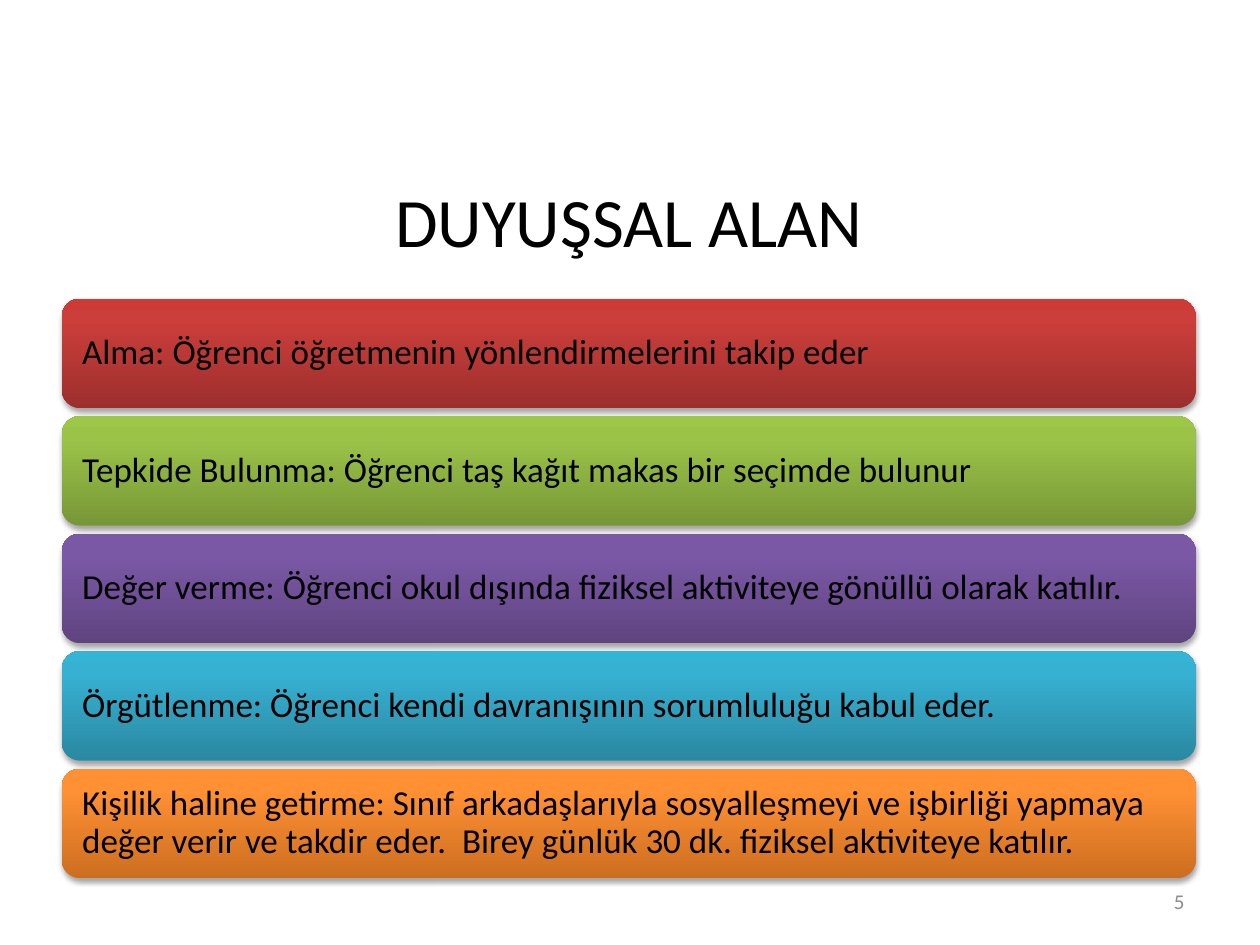
from lxml import etree
from pptx import Presentation
from pptx.dml.color import RGBColor
from pptx.enum.shapes import MSO_SHAPE
from pptx.enum.text import MSO_ANCHOR, PP_ALIGN
from pptx.oxml.ns import qn
from pptx.util import Inches, Pt

ROUNDED = MSO_SHAPE.ROUNDED_RECTANGLE
MIDDLE = MSO_ANCHOR.MIDDLE
LEFT, CENTER, RIGHT = PP_ALIGN.LEFT, PP_ALIGN.CENTER, PP_ALIGN.RIGHT
TITLE_ONLY = 5

FONT = "Calibri"
COLORS = {
    "text": "000000",
    "number": "8C8C8C",
    "shadow": "000000",
    "red": ("9C2F2D", "CB3E3A", "CE3B37"),
    "green": ("779737", "9BC348", "9DC746"),
    "purple": ("5F4480", "7B58A6", "7C57A8"),
    "blue": ("2A88A2", "37B1D2", "34B4D6"),
    "orange": ("CC6E20", "FF9034", "FF9136"),
}
STOPS = (0, 80, 100)
LEVELS = [
    ("red", "Alma: Öğrenci öğretmenin yönlendirmelerini takip eder"),
    ("green", "Tepkide Bulunma: Öğrenci taş kağıt makas bir seçimde bulunur"),
    ("purple", "Değer verme: Öğrenci okul dışında fiziksel aktiviteye gönüllü olarak katılır."),
    ("blue", "Örgütlenme: Öğrenci kendi davranışının sorumluluğu kabul eder."),
    ("orange", "Kişilik haline getirme: Sınıf arkadaşlarıyla sosyalleşmeyi ve işbirliği "
               "yapmaya değer verir ve takdir eder.  Birey günlük 30 dk. fiziksel "
               "aktiviteye katılır."),
]
BAR_LEFT, BAR_TOP, BAR_WIDTH, BAR_HEIGHT = 0.49, 2.37, 9, 0.87
BAR_STEP = 0.9325
BAR_INSET = 0.12


def write_text(shape, text, size, color, align):
    frame = shape.text_frame
    frame.word_wrap = True
    frame.vertical_anchor = MIDDLE
    paragraph = frame.paragraphs[0]
    paragraph.text = text
    paragraph.alignment = align
    paragraph.font.name = FONT
    paragraph.font.size = Pt(size)
    paragraph.font.color.rgb = RGBColor.from_string(COLORS[color])
    return paragraph


def add_color(parent, color):
    return etree.SubElement(parent, qn("a:srgbClr"), val=color)


def set_gradient(shape, colors):
    shape.fill.gradient()
    shape.fill.gradient_angle = 90
    stop_list = shape._element.spPr.find(".//" + qn("a:gsLst"))
    for stop in list(stop_list):
        stop_list.remove(stop)
    for position, color in zip(STOPS, colors):
        stop = etree.SubElement(stop_list, qn("a:gs"), pos=str(position * 1000))
        add_color(stop, color)


def set_shadow(shape):
    shape.shadow.inherit = False
    effects = shape._element.spPr.find(qn("a:effectLst"))
    shadow = etree.SubElement(effects, qn("a:outerShdw"), blurRad=str(Pt(3.1)),
                              dist=str(Pt(1.8)), dir="5400000", rotWithShape="0")
    color = add_color(shadow, COLORS["shadow"])
    etree.SubElement(color, qn("a:alpha"), val="35000")


def add_title(page, text):
    title = page.shapes.title
    title.left, title.top = Inches(0.49), Inches(1.41)
    title.width, title.height = Inches(9), Inches(0.67)
    write_text(title, text, 39.6, "text", CENTER)


def add_bar(page, top, color, text):
    bar = page.shapes.add_shape(ROUNDED, Inches(BAR_LEFT), Inches(top),
                                Inches(BAR_WIDTH), Inches(BAR_HEIGHT))
    bar.line.fill.background()
    set_gradient(bar, COLORS[color])
    set_shadow(bar)
    frame = bar.text_frame
    frame.margin_left = frame.margin_right = Inches(BAR_INSET)
    frame.margin_top = frame.margin_bottom = Inches(BAR_INSET)
    paragraph = write_text(bar, text, 20, "text", LEFT)
    paragraph.line_spacing = 0.9


def add_page_number(page, number):
    box = page.shapes.add_textbox(Inches(7.17), Inches(6.95), Inches(2.33), Inches(0.4))
    write_text(box, number, 12, "number", RIGHT)


def main():
    deck = Presentation()
    deck.slide_width, deck.slide_height = Inches(10), Inches(7.5)
    page = deck.slides.add_slide(deck.slide_layouts[TITLE_ONLY])
    add_title(page, "DUYUŞSAL ALAN")
    for index, (color, text) in enumerate(LEVELS):
        add_bar(page, BAR_TOP + index * BAR_STEP, color, text)
    add_page_number(page, "5")
    deck.save("out.pptx")


if __name__ == "__main__":
    main()
